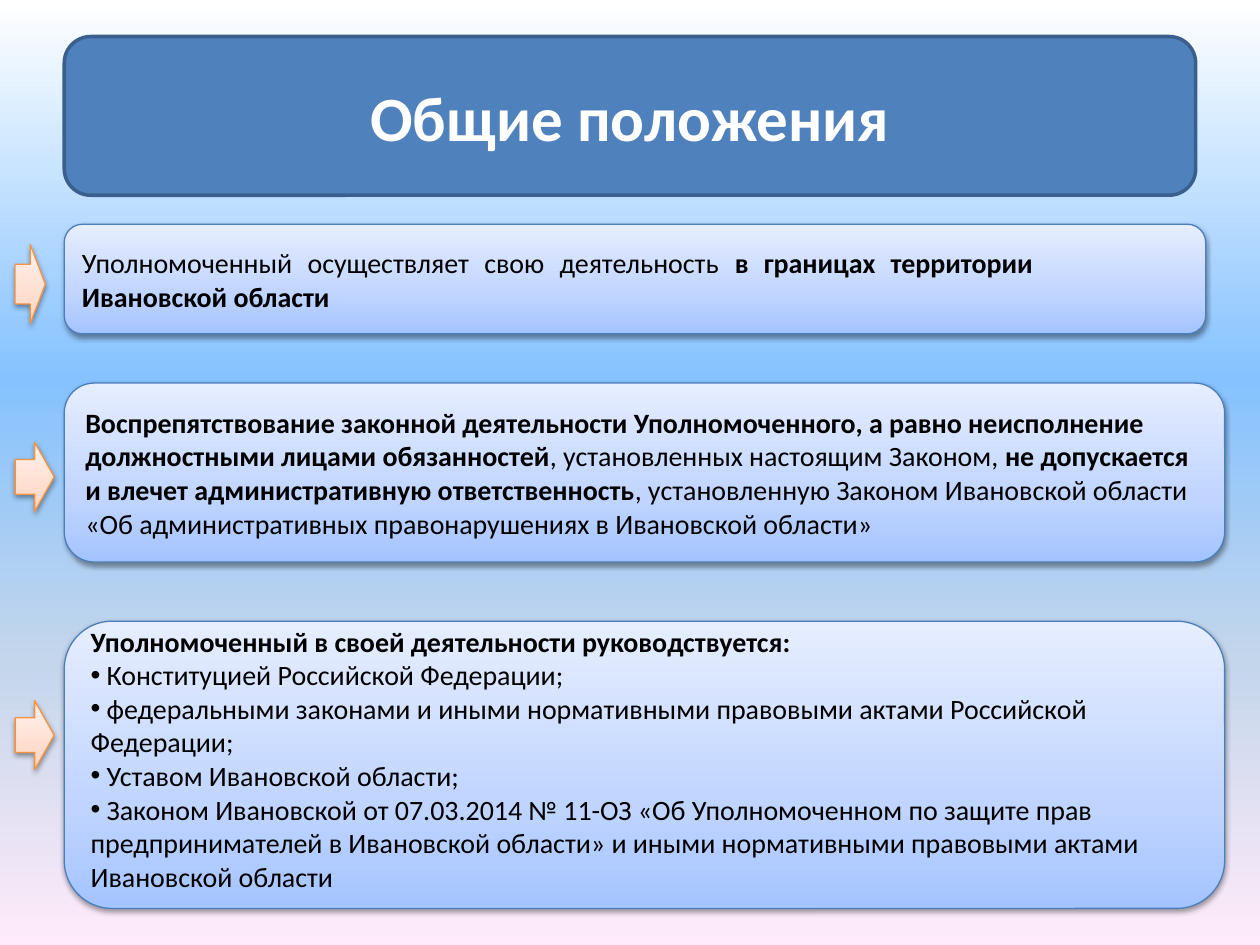
from dataclasses import dataclass
from pptx import Presentation
from pptx.dml.color import RGBColor
from pptx.enum.shapes import MSO_SHAPE
from pptx.enum.text import MSO_ANCHOR, PP_ALIGN
from pptx.oxml import parse_xml
from pptx.oxml.ns import nsdecls, qn
from pptx.util import Inches, Pt


@dataclass(frozen=True)
class Theme:
    font: str = "Calibri"
    title_size: int = 36
    body_size: int = 16
    title_fill: str = "4F81BD"
    title_line: str = "3A5F8C"
    title_text: str = "FFFFFF"
    text: str = "000000"
    card_line: str = "4B7EBC"
    arrow_line: str = "F69240"
    back: tuple = ((0, "FFFFFF"), (40, "85C2FF"), (70, "C4D6EB"), (100, "FFEBFA"))
    card: tuple = ((0, "A4C4FF"), (35, "BFD4FF"), (100, "E6EEFF"))
    arrow: tuple = ((0, "FFD2BD"), (35, "FFDED0"), (100, "FFF2ED"))


T = Theme()
LEFT, ARROW_LEFT = 0.51, 0.12
TITLE = "Общие положения"
SCOPE = [[("Уполномоченный осуществляет свою деятельность ", False),
          ("в границах территории Ивановской области", True)]]
LIABILITY = [[
    ("Воспрепятствование законной деятельности Уполномоченного, а равно неисполнение "
     "должностными лицами обязанностей", True),
    (", установленных настоящим Законом, ", False),
    ("не допускается и влечет административную ответственность", True),
    (", установленную Законом Ивановской области «Об административных правонарушениях "
     "в Ивановской области»", False)]]
SOURCES = [
    "Конституцией Российской Федерации;",
    "федеральными законами и иными нормативными правовыми актами Российской Федерации;",
    "Уставом Ивановской области;",
    "Законом Ивановской от 07.03.2014 № 11-ОЗ «Об Уполномоченном по защите прав "
    "предпринимателей в Ивановской области» и иными нормативными правовыми актами "
    "Ивановской области"]
GUIDES = [[("Уполномоченный в своей деятельности руководствуется:", True)]]
GUIDES += [[(" " + name, False)] for name in SOURCES]

CARDS = [
    dict(top=1.78, size=(9.06, 0.87), paras=SCOPE, align=PP_ALIGN.JUSTIFY,
         margins=(0.05, 1.33, 0.05), arrow=(1.94, 0.24, 0.63)),
    dict(top=3.04, size=(9.21, 1.42), paras=LIABILITY, align=PP_ALIGN.LEFT,
         margins=(0.05, 0.1, 0.05), arrow=(3.51, 0.31, 0.55)),
    dict(top=4.93, size=(9.21, 2.28), paras=GUIDES, align=PP_ALIGN.LEFT,
         margins=(0, 0.1, 0.1), arrow=(5.56, 0.31, 0.55)),
]


def set_gradient(fill, element, stops, angle):
    fill.gradient()
    grad = element.find(".//" + qn("a:gradFill"))
    items = "".join(f'<a:gs pos="{pos * 1000}"><a:srgbClr val="{color}"/></a:gs>'
                    for pos, color in stops)
    grad.replace(grad.find(qn("a:gsLst")),
                 parse_xml(f'<a:gsLst {nsdecls("a")}>{items}</a:gsLst>'))
    grad.find(qn("a:lin")).set("ang", str(angle * 60000))


def add_box(s, kind, box, line, width):
    sp = s.shapes.add_shape(kind, *map(Inches, box))
    sp.shadow.inherit = False
    sp.line.color.rgb = RGBColor.from_string(line)
    sp.line.width = Pt(width)
    return sp


def add_raised(s, kind, box, line, stops):
    sp = add_box(s, kind, box, line, 0.75)
    set_gradient(sp.fill, sp.element, stops, 270)
    sp.element.spPr.find(qn("a:effectLst")).append(parse_xml(
        f'<a:outerShdw {nsdecls("a")} blurRad="{Pt(3.1)}" dist="{Pt(1.6)}" dir="5400000" '
        'rotWithShape="0"><a:srgbClr val="000000"><a:alpha val="38000"/></a:srgbClr>'
        '</a:outerShdw>'))
    return sp


def add_text(sp, paras, size, color, align):
    tf = sp.text_frame
    tf.word_wrap = True
    tf.vertical_anchor = MSO_ANCHOR.MIDDLE
    for i, runs in enumerate(paras):
        p = tf.add_paragraph() if i else tf.paragraphs[0]
        p.alignment = align
        if i:
            pPr = p._p.get_or_add_pPr()
            pPr.append(parse_xml(f'<a:buFont {nsdecls("a")} typeface="Arial"/>'))
            pPr.append(parse_xml(f'<a:buChar {nsdecls("a")} char="•"/>'))
        for text, bold in runs:
            r = p.add_run()
            r.text = text
            r.font.name, r.font.size, r.font.bold = T.font, Pt(size), bold
            r.font.color.rgb = RGBColor.from_string(color)
    return tf


def main():
    """Build the slide of general provisions."""
    prs = Presentation()
    prs.slide_width, prs.slide_height = Inches(10), Inches(7.5)
    s = prs.slides.add_slide(prs.slide_layouts[6])
    set_gradient(s.background.fill, s.element, T.back, 90)

    sp = add_box(s, MSO_SHAPE.ROUNDED_RECTANGLE, (LEFT, 0.29, 8.98, 1.26), T.title_line, 2)
    sp.fill.solid()
    sp.fill.fore_color.rgb = RGBColor.from_string(T.title_fill)
    add_text(sp, [[(TITLE, True)]], T.title_size, T.title_text, PP_ALIGN.CENTER)

    for card in CARDS:
        sp = add_raised(s, MSO_SHAPE.ROUNDED_RECTANGLE, (LEFT, card["top"], *card["size"]),
                        T.card_line, T.card)
        tf = add_text(sp, card["paras"], T.body_size, T.text, card["align"])
        tf.margin_top, tf.margin_right, tf.margin_bottom = map(Inches, card["margins"])
        add_raised(s, MSO_SHAPE.RIGHT_ARROW, (ARROW_LEFT, *card["arrow"]),
                   T.arrow_line, T.arrow)
    prs.save("out.pptx")


if __name__ == "__main__":
    main()
